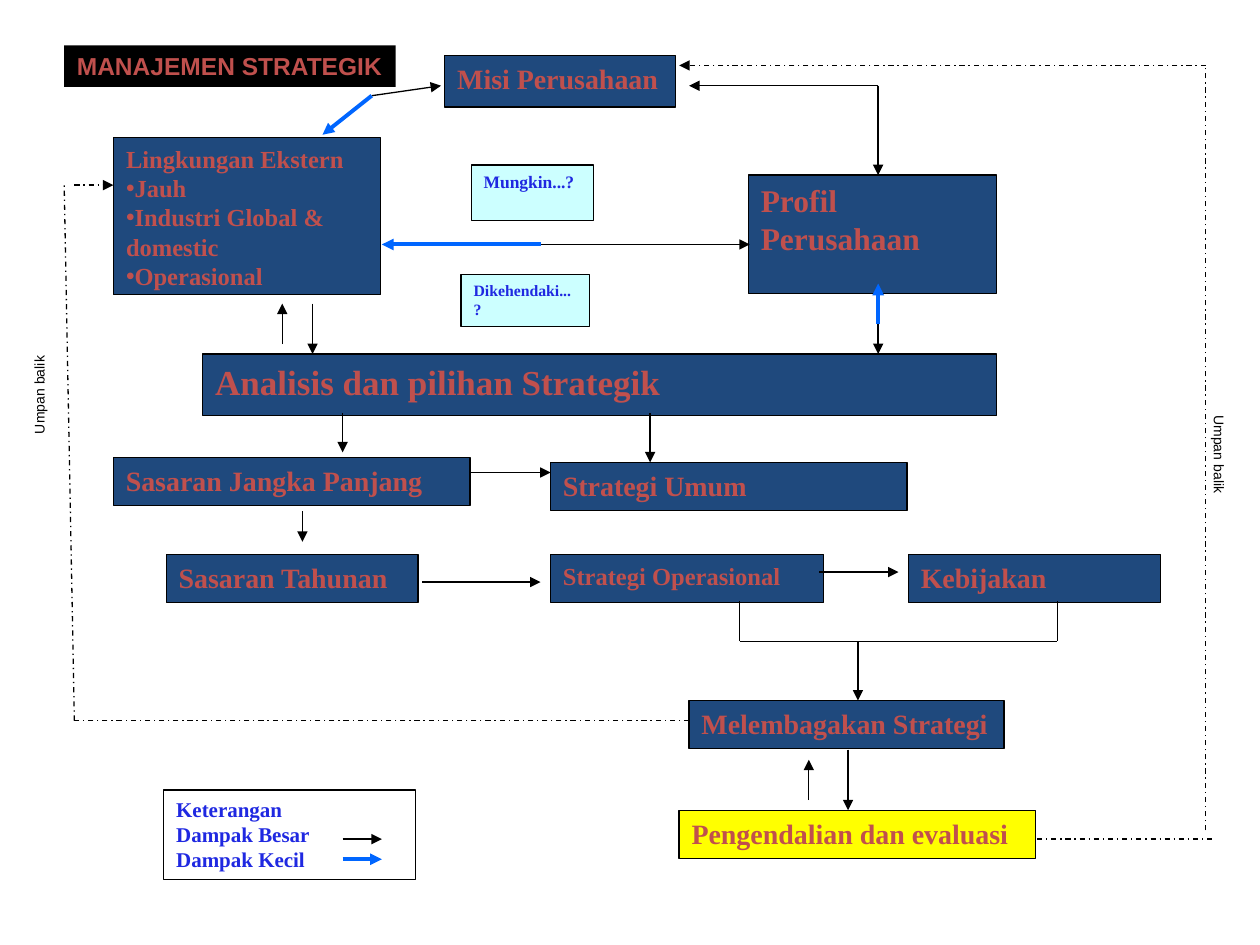
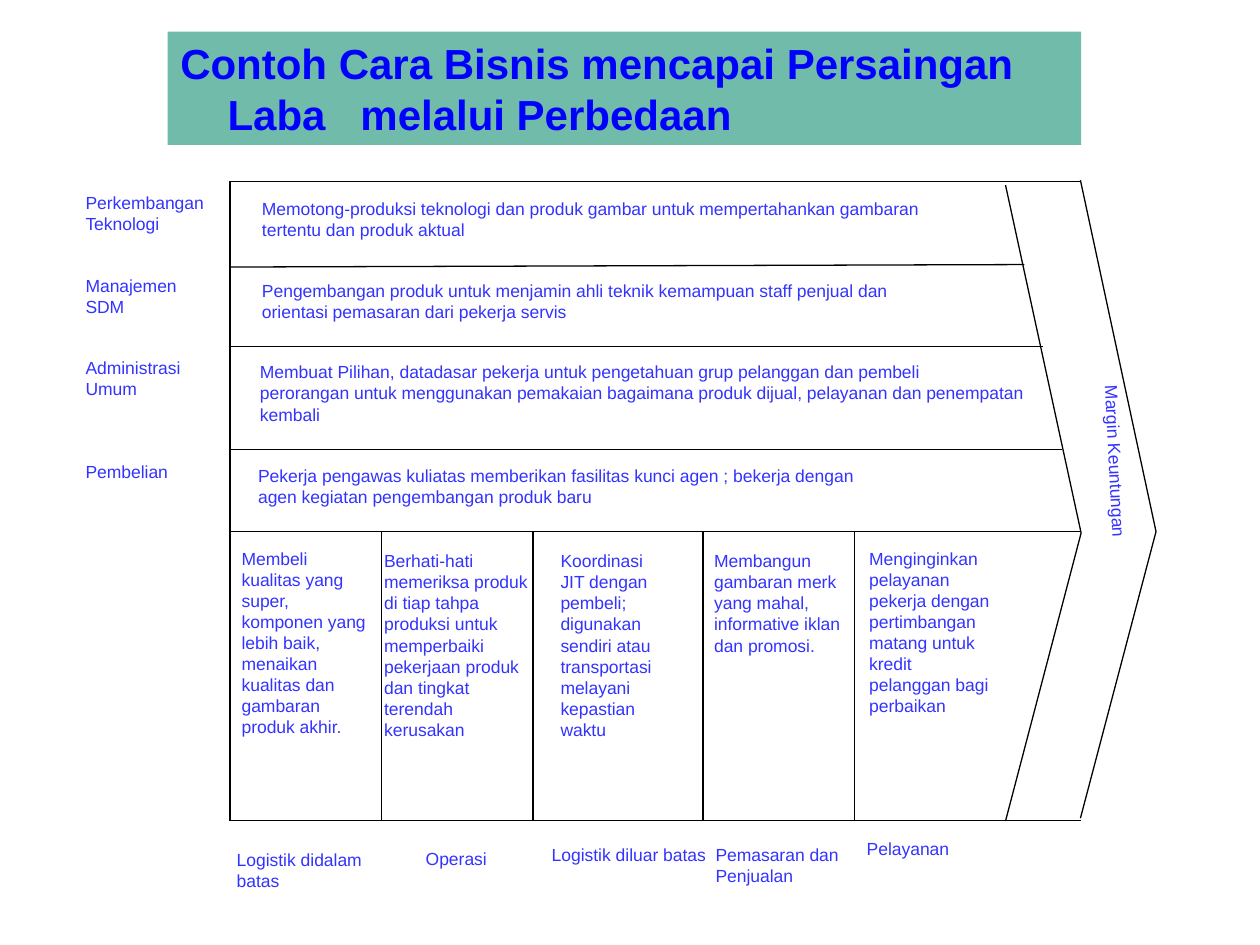
from dataclasses import dataclass

from lxml import etree
from pptx import Presentation
from pptx.dml.color import RGBColor
from pptx.enum.dml import MSO_LINE
from pptx.enum.shapes import MSO_CONNECTOR, MSO_SHAPE
from pptx.enum.text import MSO_ANCHOR, MSO_AUTO_SIZE, PP_ALIGN
from pptx.oxml.ns import qn
from pptx.util import Pt

DASH_DOT = MSO_LINE.DASH_DOT
STRAIGHT = MSO_CONNECTOR.STRAIGHT
RECTANGLE = MSO_SHAPE.RECTANGLE
TOP, MIDDLE = MSO_ANCHOR.TOP, MSO_ANCHOR.MIDDLE
LEFT, CENTER = PP_ALIGN.LEFT, PP_ALIGN.CENTER
TITLE_AND_BODY, TITLE_ONLY = 1, 5


@dataclass(frozen=True)
class Theme:
    black: str = "000000"
    white: str = "FFFFFF"
    navy: str = "1F497D"
    red: str = "C0504D"
    yellow: str = "FFFF00"
    pale_cyan: str = "CCFFFF"
    ink_blue: str = "1F28E1"
    arrow_blue: str = "0066FF"
    text_blue: str = "3333FF"
    title_blue: str = "0000FF"
    teal: str = "71BBAB"
    serif: str = "Times New Roman"
    sans: str = "Arial"
    thin: float = 0.75
    thick: float = 2.25
    huge: int = 24
    banner: int = 20
    large: int = 18
    heading: int = 16
    medium: int = 14
    legend: int = 12
    body: int = 10
    note: int = 9
    tiny: int = 8


class Deck:
    """Holds the theme and the slide being drawn; lengths are in points."""

    def __init__(self, theme):
        self.theme = theme
        self.presentation = Presentation()
        self.presentation.slide_width = Pt(720)
        self.presentation.slide_height = Pt(540)
        self.slide = None

    def new_slide(self, layout):
        layouts = self.presentation.slide_layouts
        self.slide = self.presentation.slides.add_slide(layouts[layout])

    def place(self, shape, frame):
        shape.left, shape.top, shape.width, shape.height = map(Pt, frame)

    def paint(self, shape, fill, outline=None):
        shape.fill.solid()
        shape.fill.fore_color.rgb = RGBColor.from_string(fill)
        if outline:
            shape.line.color.rgb = RGBColor.from_string(outline)
            shape.line.width = Pt(self.theme.thin)
        else:
            shape.line.fill.background()

    def set_text(self, shape, text, size, color, font, bold=False, anchor=TOP,
                 align=LEFT, wrap=True):
        frame = shape.text_frame
        frame.text = text
        frame.word_wrap = wrap
        frame.auto_size = MSO_AUTO_SIZE.NONE
        frame.vertical_anchor = anchor
        for paragraph in frame.paragraphs:
            paragraph.alignment = align
            paragraph.space_before = Pt(0)
            paragraph.font.size = Pt(size)
            paragraph.font.name = font
            paragraph.font.bold = bold
            paragraph.font.color.rgb = RGBColor.from_string(color)

    def indent(self, paragraph, left, first):
        properties = paragraph._p.get_or_add_pPr()
        properties.set("marL", str(Pt(left)))
        properties.set("indent", str(Pt(first)))
        return properties

    def title(self, text, frame, fill, size, color, hanging=0):
        shape = self.slide.shapes.title
        self.place(shape, frame)
        self.paint(shape, fill)
        self.set_text(shape, text, size, color, self.theme.sans, True, MIDDLE)
        self.indent(shape.text_frame.paragraphs[0], hanging, -hanging)

    def list_box(self, heading, items, frame):
        """Fill the body placeholder with a heading and bulleted items."""
        theme = self.theme
        shape = self.slide.placeholders[1]
        self.place(shape, frame)
        self.paint(shape, theme.navy, theme.black)
        self.set_text(shape, "\n".join([heading, *items]), theme.medium,
                      theme.red, theme.serif, True)
        for number, paragraph in enumerate(shape.text_frame.paragraphs):
            properties = self.indent(paragraph, 0, 0)
            bullet = etree.Element(qn("a:buChar" if number else "a:buNone"))
            if number:
                bullet.set("char", "•")
            properties.find(qn("a:defRPr")).addprevious(bullet)

    def box(self, text, frame, size, fill=None, color=None):
        theme = self.theme
        shape = self.slide.shapes.add_shape(RECTANGLE, *map(Pt, frame))
        shape.shadow.inherit = False
        self.paint(shape, fill or theme.navy, theme.black)
        self.set_text(shape, text, size, color or theme.red, theme.serif, True)

    def label(self, text, frame, size=None, color=None, rotation=0, **layout):
        theme = self.theme
        shape = self.slide.shapes.add_textbox(*map(Pt, frame))
        shape.rotation = rotation
        self.set_text(shape, text, size or theme.body,
                      color or theme.text_blue, theme.sans, **layout)

    def line(self, x1, y1, x2, y2, arrow=False, dashed=False, minor=False):
        theme = self.theme
        connector = self.slide.shapes.add_connector(
            STRAIGHT, *map(Pt, (x1, y1, x2, y2)))
        line = connector.line
        line.color.rgb = RGBColor.from_string(
            theme.arrow_blue if minor else theme.black)
        line.width = Pt(theme.thick if minor else theme.thin)
        if dashed:
            line.dash_style = DASH_DOT
        properties = connector._element.spPr
        if arrow:
            etree.SubElement(properties.find(qn("a:ln")), qn("a:tailEnd"),
                             type="triangle")
        etree.SubElement(properties, qn("a:effectLst"))

    def outline(self, start, *points):
        builder = self.slide.shapes.build_freeform(*map(Pt, start))
        builder.add_line_segments(
            [tuple(map(Pt, point)) for point in points], close=False)
        shape = builder.convert_to_shape()
        shape.shadow.inherit = False
        shape.fill.background()
        shape.line.color.rgb = RGBColor.from_string(self.theme.black)
        shape.line.width = Pt(self.theme.thin)


def strategic_management(deck):
    theme = deck.theme
    deck.new_slide(TITLE_AND_BODY)
    deck.title("MANAJEMEN STRATEGIK", (36.7, 25.9, 189.4, 23.8), theme.black,
               theme.medium, theme.red)
    deck.list_box("Lingkungan Ekstern",
                  ["Jauh", "Industri Global & domestic", "Operasional"],
                  (64.8, 78.5, 152.6, 90))

    # Process boxes
    step = 27.4
    for text, frame, size in [
        ("Misi Perusahaan", (254.2, 31.7, 131.8, 29.5), theme.heading),
        ("Profil Perusahaan", (427.7, 100.1, 141.8, 67.7), theme.large),
        ("Analisis dan pilihan Strategik", (115.9, 202.3, 453.6, 35.3),
         theme.banner),
        ("Sasaran Jangka Panjang", (64.8, 261.4, 203.8, step), theme.heading),
        ("Strategi Umum", (314.6, 264.2, 203.8, step), theme.heading),
        ("Sasaran Tahunan", (95, 316.8, 144, step), theme.heading),
        ("Strategi Operasional", (314.6, 316.8, 156.2, step), theme.medium),
        ("Kebijakan", (519.1, 316.8, 144, step), theme.heading),
        ("Melembagakan Strategi", (393.8, 400.3, 180, step), theme.heading),
    ]:
        deck.box(text, frame, size)
    deck.box("Pengendalian dan evaluasi", (388.1, 463, 203.8, step),
             theme.heading, theme.yellow)

    # Questions and legend
    for text, frame, size, fill in [
        ("Mungkin...?", (269.3, 94.3, 69.8, 31.7), theme.body,
         theme.pale_cyan),
        ("Dikehendaki...?", (263.5, 157, 73.4, 29.5), theme.note,
         theme.pale_cyan),
        ("Keterangan\nDampak Besar\nDampak Kecil", (93.6, 451.4, 144, 51.1),
         theme.legend, theme.white),
    ]:
        deck.box(text, frame, size, fill, theme.ink_blue)

    # Feedback loops
    for ends in [(393.8, 411.8, 42.5, 411.8), (592.6, 479.5, 694.8, 479.5),
                 (689, 474.5, 689, 37.4), (42.5, 411.8, 36.7, 105.8)]:
        deck.line(*ends, dashed=True)
    for ends in [(689, 37.4, 388.1, 37.4), (42.5, 105.8, 64.8, 105.8)]:
        deck.line(*ends, arrow=True, dashed=True)
    for frame, rotation in [((-7.2, 217.4, 59, 16.6), 270),
                            ((667.4, 251.3, 59, 16.6), 90)]:
        deck.label("Umpan balik", frame, theme.tiny, theme.black, rotation,
                   align=CENTER, wrap=False)

    # Bracket joining operations and policy
    for ends in [(422.6, 343.4, 422.6, 366.5), (604.1, 343.4, 604.1, 366.5),
                 (422.6, 366.5, 604.1, 366.5)]:
        deck.line(*ends)

    # Major impact arrows
    for ends in [
        (462.2, 457.2, 462.2, 434.2), (484.6, 428.4, 484.6, 463),
        (490.3, 366.5, 490.3, 400.3), (468, 326.9, 513.4, 326.9),
        (241.2, 332.6, 308.9, 332.6), (269.3, 270, 314.6, 270),
        (371.5, 236.2, 371.5, 264.2), (195.8, 236.2, 195.8, 258.5),
        (172.8, 292.3, 172.8, 309.6), (501.8, 185, 501.8, 202.3),
        (161.3, 196.6, 161.3, 173.5), (178.6, 173.5, 178.6, 202.3),
        (308.9, 139.7, 428.4, 139.7), (501.8, 49, 501.8, 100.1),
        (501.8, 49, 393.8, 49), (212.4, 54.7, 252, 49),
        (195.8, 479.5, 218.2, 479.5),
    ]:
        deck.line(*ends, arrow=True)

    # Minor impact arrows
    for ends in [(501.8, 185, 501.8, 162), (308.9, 139.7, 218.2, 139.7),
                 (212.4, 54.7, 184.3, 77), (195.8, 491, 218.2, 491)]:
        deck.line(*ends, arrow=True, minor=True)


def value_chain(deck):
    theme = deck.theme
    deck.new_slide(TITLE_ONLY)
    deck.title("Contoh Cara Bisnis mencapai Persaingan Laba   melalui Perbedaan",
               (95.8, 18, 522, 64.8), theme.teal, theme.huge,
               theme.title_blue, hanging=27)

    # Frame, row rules and column rules
    left, top, middle, bottom = 131.4, 103.7, 303.8, 469
    for ends in [(left, top, left, bottom), (left, top, 617, top),
                 (left, 152.6, 585.4, 151.2), (left, 198, 596.2, 198),
                 (left, 257, 607, 257), (left, middle, 617.8, middle),
                 (left, bottom, 617.8, bottom)]:
        deck.line(*ends)
    for x in (218.2, 304.6, 401.8, 488.2):
        deck.line(x, middle, x, bottom)

    # Margin arrowhead, inner and outer edges
    for x, start, tip, end in [(574.6, 105.8, 304.6, 469.2),
                               (617.4, 103, 303.8, 467.6)]:
        deck.outline((x, start), (x + 43.2, tip), (x, end))
    deck.label("Margin Keuntungan", (553.7, 272.2, 153.4, 36), rotation=87.1)

    # Support activities
    for name, name_top, text, x, y, width in [
        ("Perkembangan Teknologi", 106.1,
         "Memotong-produksi teknologi dan produk gambar untuk "
         "mempertahankan gambaran tertentu dan produk aktual",
         142.6, 109.4, 399.6),
        ("Manajemen SDM", 153.6,
         "Pengembangan produk untuk menjamin ahli teknik kemampuan staff "
         "penjual dan orientasi pemasaran dari pekerja servis",
         142.6, 156.2, 399.6),
        ("Administrasi Umum", 200.5,
         "Membuat Pilihan, datadasar pekerja untuk pengetahuan grup "
         "pelanggan dan pembeli\nperorangan untuk menggunakan pemakaian "
         "bagaimana produk dijual, pelayanan dan penempatan kembali",
         141.5, 203, 475.2),
        ("Pembelian", 260.2,
         "Pekerja pengawas kuliatas memberikan fasilitas kunci agen ; "
         "bekerja dengan agen kegiatan pengembangan produk baru",
         140.4, 262.1, 378),
    ]:
        deck.label(name, (41.8, name_top, 86.4, 36))
        deck.label(text, (x, y, width, 46.8))

    # Primary activities
    for name, name_x, name_y, text, x, y, width in [
        ("Logistik didalam batas", 128.2, 481.7,
         "Membeli kualitas yang super, komponen yang lebih baik, menaikan "
         "kualitas dan gambaran produk akhir.", 131, 309.6, 86.4),
        ("Operasi", 236.2, 481,
         "Berhati-hati memeriksa produk di tiap tahpa produksi untuk "
         "memperbaiki pekerjaan produk dan tingkat terendah kerusakan",
         212.4, 311, 97.2),
        ("Logistik diluar batas", 308.2, 478.8,
         "Koordinasi JIT dengan pembeli; digunakan sendiri atau "
         "transportasi melayani kepastian waktu", 313.2, 311, 75.6),
        ("Pemasaran dan Penjualan", 401.8, 478.8,
         "Membangun gambaran merk yang mahal, informative iklan dan "
         "promosi.", 401, 311, 86.4),
        ("Pelayanan", 488.2, 475.5,
         "Menginginkan pelayanan pekerja dengan pertimbangan matang untuk "
         "kredit pelanggan bagi perbaikan", 489.6, 309.6, 86.4),
    ]:
        deck.label(name, (name_x, name_y, 108, 36))
        deck.label(text, (x, y, width, 153.4))


def main():
    deck = Deck(Theme())
    strategic_management(deck)
    value_chain(deck)
    deck.presentation.save("out.pptx")


if __name__ == "__main__":
    main()
